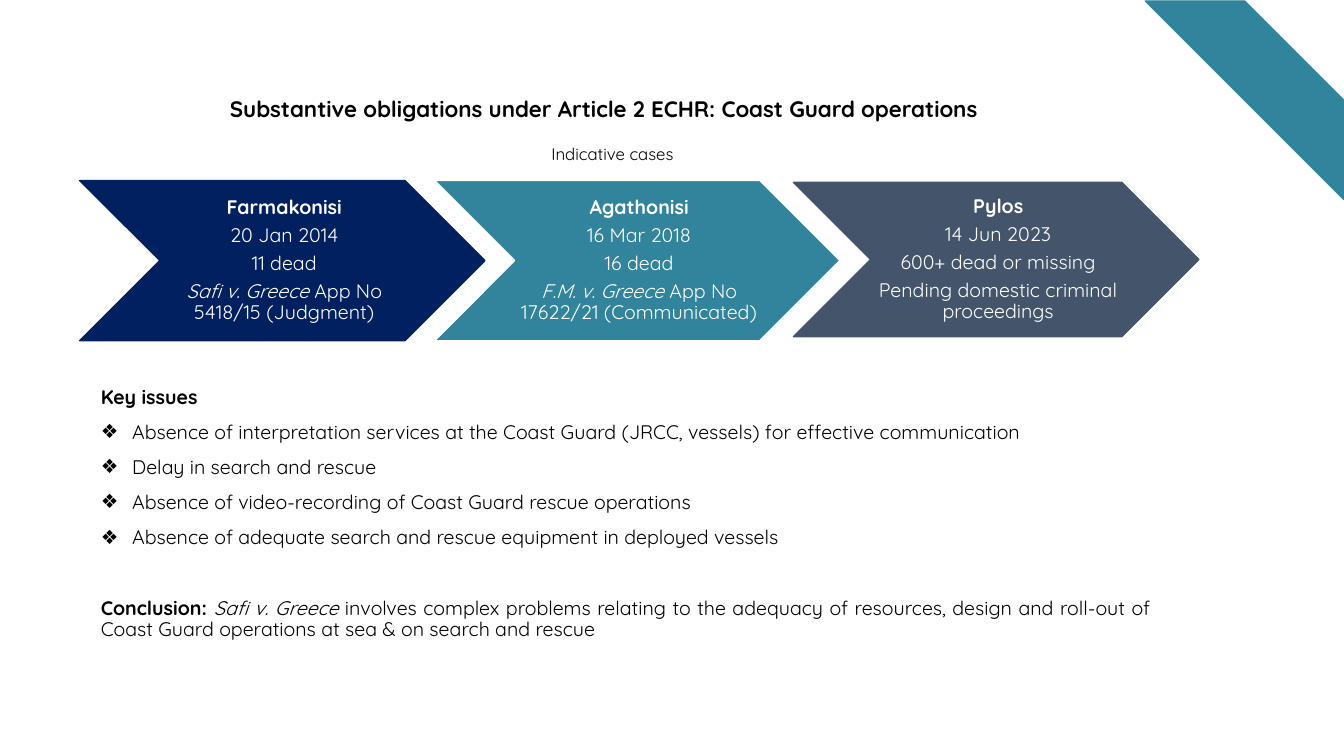
from lxml import etree
from pptx import Presentation
from pptx.dml.color import RGBColor
from pptx.enum.shapes import MSO_SHAPE as SHAPE
from pptx.enum.text import MSO_ANCHOR as ANCHOR, MSO_AUTO_SIZE as AUTO, PP_ALIGN as ALIGN
from pptx.oxml.ns import qn
from pptx.util import Inches, Pt

FONT = "Quicksand"
TEAL, NAVY, SLATE = "31849B", "002060", "44546A"
WHITE, BLACK = "FFFFFF", "000000"
BOLD, ITALIC = {"bold": True}, {"italic": True}

CASES = [
    ((0.79, 1.79, 4.02, 1.59), 2.43, NAVY, NAVY, [
        [("Farmakonisi", BOLD)],
        [("20 Jan 2014", {})],
        [("11 dead", {})],
        [("Safi v. Greece ", ITALIC), ("App No 5418/15 (Judgment)", {})],
    ]),
    ((4.31, 1.79, 4.02, 1.59), 2.43, TEAL, WHITE, [
        [("Agathonisi", BOLD)],
        [("16 Mar 2018", {})],
        [("16 dead", {})],
        [("F.M. v. Greece ", ITALIC), ("App No 17622/21 (Communicated)", {})],
    ]),
    ((7.87, 1.81, 4.02, 1.53), 2.49, SLATE, SLATE, [
        [("Pylos", BOLD)],
        [("14 Jun 2023", {})],
        [("600+ dead or missing", {})],
        [("Pending domestic criminal proceedings", {})],
    ]),
]

ISSUES = [
    "Absence of interpretation services at the Coast Guard (JRCC, vessels) for effective communication",
    "Delay in search and rescue",
    "Absence of video-recording of Coast Guard rescue operations",
    "Absence of adequate search and rescue equipment in deployed vessels",
]

CONCLUSION = [
    ("Conclusion: ", BOLD),
    ("Safi v. Greece ", ITALIC),
    ("involves complex problems relating to the adequacy of resources, design and "
     "roll-out of Coast Guard operations at sea & on search and rescue", {}),
]


def rgb(value):
    return RGBColor.from_string(value)


def apply(obj, values):
    for name, value in values.items():
        setattr(obj, name, value)


def place(sp, box):
    apply(sp, dict(zip(("left", "top", "width", "height"), map(Inches, box))))


def paint(sp, fill, line):
    sp.shadow.inherit = False
    sp.fill.solid()
    sp.fill.fore_color.rgb = rgb(fill)
    sp.line.color.rgb = rgb(line)
    sp.line.width = Pt(1)


def write(tf, paras, size, color, para_format, frame_format):
    apply(tf, {"word_wrap": True, "auto_size": AUTO.NONE, **frame_format})
    for i, runs in enumerate(paras):
        p = tf.paragraphs[0] if i == 0 else tf.add_paragraph()
        apply(p, para_format)
        for text, style in runs:
            r = p.add_run()
            r.text = text
            apply(r.font, {"name": FONT, "size": Pt(size), "bold": False,
                           "italic": False, **style})
            r.font.color.rgb = rgb(color)


def add_bullet(p):
    pPr = p._p.get_or_add_pPr()
    pPr.set("marL", str(Inches(0.31)))
    pPr.set("indent", str(-Inches(0.31)))
    etree.SubElement(pPr, qn("a:buChar")).set("char", "❖")


def add_heading(s, box):
    x, y, w, h = box
    title = s.shapes.title
    place(title, box)
    write(title.text_frame, [[("Substantive obligations under Article 2 ECHR: Coast Guard operations", BOLD)]],
          16, BLACK, {"alignment": ALIGN.CENTER, "line_spacing": 0.9},
          {"vertical_anchor": ANCHOR.BOTTOM})
    sp = s.shapes.add_textbox(0, 0, 0, 0)
    place(sp, (x + 0.61, y + 0.5, w - 1.05, 0.3))
    write(sp.text_frame, [[("Indicative cases", {})]], 12, BLACK,
          {"alignment": ALIGN.CENTER}, {})


def add_case(s, box, text_w, fill, line, paras):
    x, y, w, h = box
    chevron = s.shapes.add_shape(SHAPE.CHEVRON, *map(Inches, box))
    paint(chevron, fill, line)
    label = s.shapes.add_textbox(*map(Inches, (x + h / 2, y, text_w, h)))
    edge = Inches(0.02)
    write(label.text_frame, paras, 14, WHITE,
          {"alignment": ALIGN.CENTER, "line_spacing": 0.9, "space_after": Pt(4.9)},
          {"vertical_anchor": ANCHOR.MIDDLE, "margin_left": Inches(0.06),
           "margin_top": edge, "margin_right": edge, "margin_bottom": edge})


def add_issues(s, box):
    sp = s.placeholders[1]
    place(sp, box)
    tf = sp.text_frame
    paras = [[("Key issues", BOLD)], *[[(issue, {})] for issue in ISSUES], CONCLUSION]
    write(tf, paras, 14, BLACK,
          {"alignment": ALIGN.JUSTIFY, "line_spacing": 0.9, "space_before": Pt(10)},
          {"vertical_anchor": ANCHOR.TOP})
    for p in tf.paragraphs[1:-1]:
        add_bullet(p)
    tf.paragraphs[-1].space_before = Pt(35)


def add_corner_stripe(s, box):
    x, y, w, h = box
    points = [(x + w / 2, y), (x + w, y + h / 2), (x + w, y + h)]
    fb = s.shapes.build_freeform(Inches(x), Inches(y))
    fb.add_line_segments([(Inches(a), Inches(b)) for a, b in points])
    paint(fb.convert_to_shape(), TEAL, TEAL)


def main():
    prs = Presentation()
    prs.slide_width, prs.slide_height = Inches(13.33), Inches(7.5)
    s = prs.slides.add_slide(prs.slide_layouts[0])
    for case in CASES:
        add_case(s, *case)
    add_issues(s, (0.9, 3.79, 10.62, 3.19))
    add_corner_stripe(s, (11.36, 0.01, 1.97, 1.97))
    add_heading(s, (1.58, 0.88, 8.82, 0.38))
    prs.save("out.pptx")


if __name__ == "__main__":
    main()
